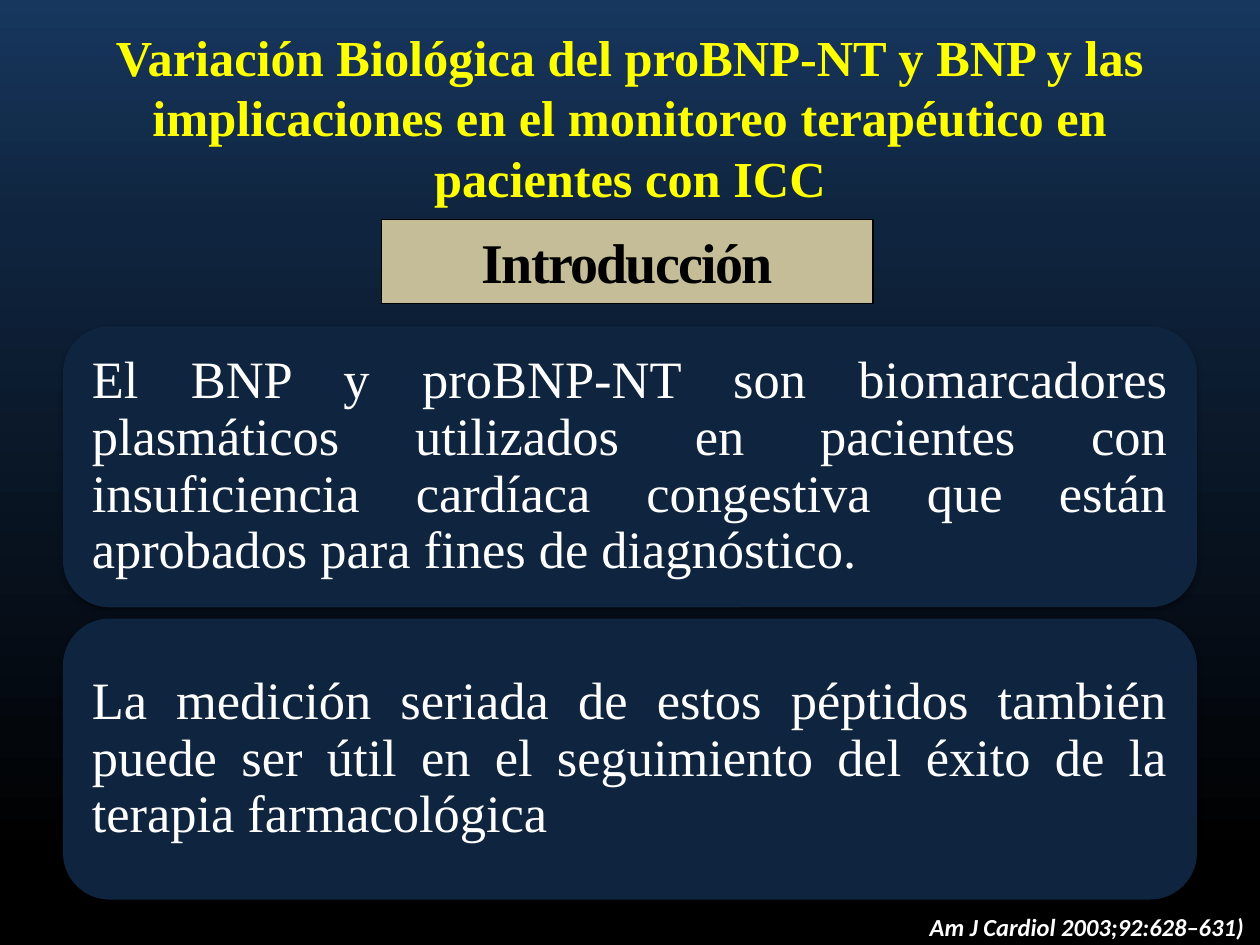
from pptx import Presentation
from pptx.dml.color import RGBColor
from pptx.enum import shapes, text
from pptx.oxml import parse_xml
from pptx.oxml.ns import nsdecls, qn
from pptx.util import Inches, Pt

YELLOW = RGBColor(0xFF, 0xFF, 0x00)
WHITE = RGBColor(0xFF, 0xFF, 0xFF)
BLACK = RGBColor(0x00, 0x00, 0x00)
NAVY = RGBColor(0x0F, 0x24, 0x3E)
BLUE = RGBColor(0x17, 0x37, 0x5E)
TAN = RGBColor(0xC4, 0xBD, 0x97)
SERIF, SANS = "Times New Roman", "Calibri"

TITLE = ("Variación Biológica del proBNP-NT y BNP y las implicaciones en el "
         "monitoreo terapéutico en pacientes con ICC")
STATEMENTS = [
    "El BNP y proBNP-NT son biomarcadores plasmáticos utilizados en pacientes "
    "con insuficiencia cardíaca congestiva que están aprobados para fines de "
    "diagnóstico.",
    "La medición seriada de estos péptidos también puede ser útil en el "
    "seguimiento del éxito de la terapia farmacológica",
]


def write(frame, words, size, color, font=SERIF, bold=False, italic=False,
          align=text.PP_ALIGN.CENTER, anchor=text.MSO_ANCHOR.MIDDLE,
          wrap=True, line_spacing=None, tracking=None):
    """Fill a text frame with one formatted paragraph."""
    frame.word_wrap = wrap
    frame.vertical_anchor = anchor
    paragraph = frame.paragraphs[0]
    paragraph.alignment = align
    if line_spacing:
        paragraph.line_spacing = line_spacing
    run = paragraph.add_run()
    run.text = words
    run.font.name, run.font.size = font, Pt(size)
    run.font.bold, run.font.italic = bold, italic
    run.font.color.rgb = color
    if tracking:
        run.font._element.set("spc", str(int(tracking * 100)))


def paint_background(slide):
    fill = slide.background.fill
    fill.gradient()
    gradient = fill._fill._gradFill
    stops = "".join(
        f'<a:gs pos="{percent * 1000}"><a:srgbClr val="{color}"/></a:gs>'
        for percent, color in [(0, BLUE), (24, NAVY), (91, BLACK)])
    gradient.replace(gradient.find(qn("a:gsLst")),
                     parse_xml(f'<a:gsLst {nsdecls("a")}>{stops}</a:gsLst>'))
    gradient.find(qn("a:lin")).set("ang", str(90 * 60000))


def add_soft_shadow(shape):
    shape._element.spPr.append(parse_xml(
        f'<a:effectLst {nsdecls("a")}><a:outerShdw blurRad="{Pt(3.1)}" '
        f'dist="{Pt(1.8)}" dir="5400000" rotWithShape="0">'
        f'<a:srgbClr val="{BLACK}"><a:alpha val="35000"/></a:srgbClr>'
        '</a:outerShdw></a:effectLst>'))


def place_title(slide, left, top, width, height):
    title = slide.shapes.title
    title.left, title.top, title.width, title.height = left, top, width, height
    write(title.text_frame, TITLE, 28.8, YELLOW, bold=True)
    title.text_frame.auto_size = text.MSO_AUTO_SIZE.NONE


def add_section_label(slide, left, top, width, height):
    label = slide.shapes.add_shape(
        shapes.MSO_SHAPE.RECTANGLE, left, top, width, height)
    label.shadow.inherit = False
    label.fill.solid()
    label.fill.fore_color.rgb = TAN
    label.line.color.rgb = BLACK
    label.line.width = Pt(0.75)
    write(label.text_frame, "Introducción", 32, BLACK, bold=True, tracking=-1)


def add_statements(slide, left, top, width, height, gap):
    """Stack equal rounded cards in the given box."""
    count = len(STATEMENTS)
    card_height = (height - gap * (count - 1)) // count
    for row, statement in enumerate(STATEMENTS):
        card = slide.shapes.add_shape(
            shapes.MSO_SHAPE.ROUNDED_RECTANGLE, left,
            top + row * (card_height + gap), width, card_height)
        card.fill.solid()
        card.fill.fore_color.rgb = NAVY
        card.line.fill.background()
        add_soft_shadow(card)
        frame = card.text_frame
        frame.margin_left = frame.margin_right = Inches(0.12)
        frame.margin_top = frame.margin_bottom = Inches(0.12)
        write(frame, statement, 30, WHITE,
              align=text.PP_ALIGN.JUSTIFY, line_spacing=0.9)


def add_citation(slide, left, top, width, height):
    citation = slide.shapes.add_textbox(left, top, width, height)
    write(citation.text_frame, "Am J Cardiol 2003;92:628–631)", 14, WHITE,
          font=SANS, bold=True, italic=True, wrap=False,
          align=text.PP_ALIGN.LEFT, anchor=text.MSO_ANCHOR.TOP)
    citation.text_frame.auto_size = text.MSO_AUTO_SIZE.SHAPE_TO_FIT_TEXT


def main():
    deck = Presentation()
    deck.slide_width, deck.slide_height = Inches(10), Inches(7.5)
    slide = deck.slides.add_slide(deck.slide_layouts.get_by_name("Title Only"))
    paint_background(slide)
    place_title(slide, Inches(0.5), Inches(0.3), Inches(9), Inches(1.25))
    add_section_label(slide, Inches(3.03), Inches(1.74),
                      Inches(3.9), Inches(0.67))
    add_citation(slide, Inches(7.28), Inches(7.19), Inches(2.72), Inches(0.34))
    add_statements(slide, Inches(0.5), Inches(2.59), Inches(9), Inches(4.55),
                   gap=Inches(0.09))
    deck.save("out.pptx")


if __name__ == "__main__":
    main()
